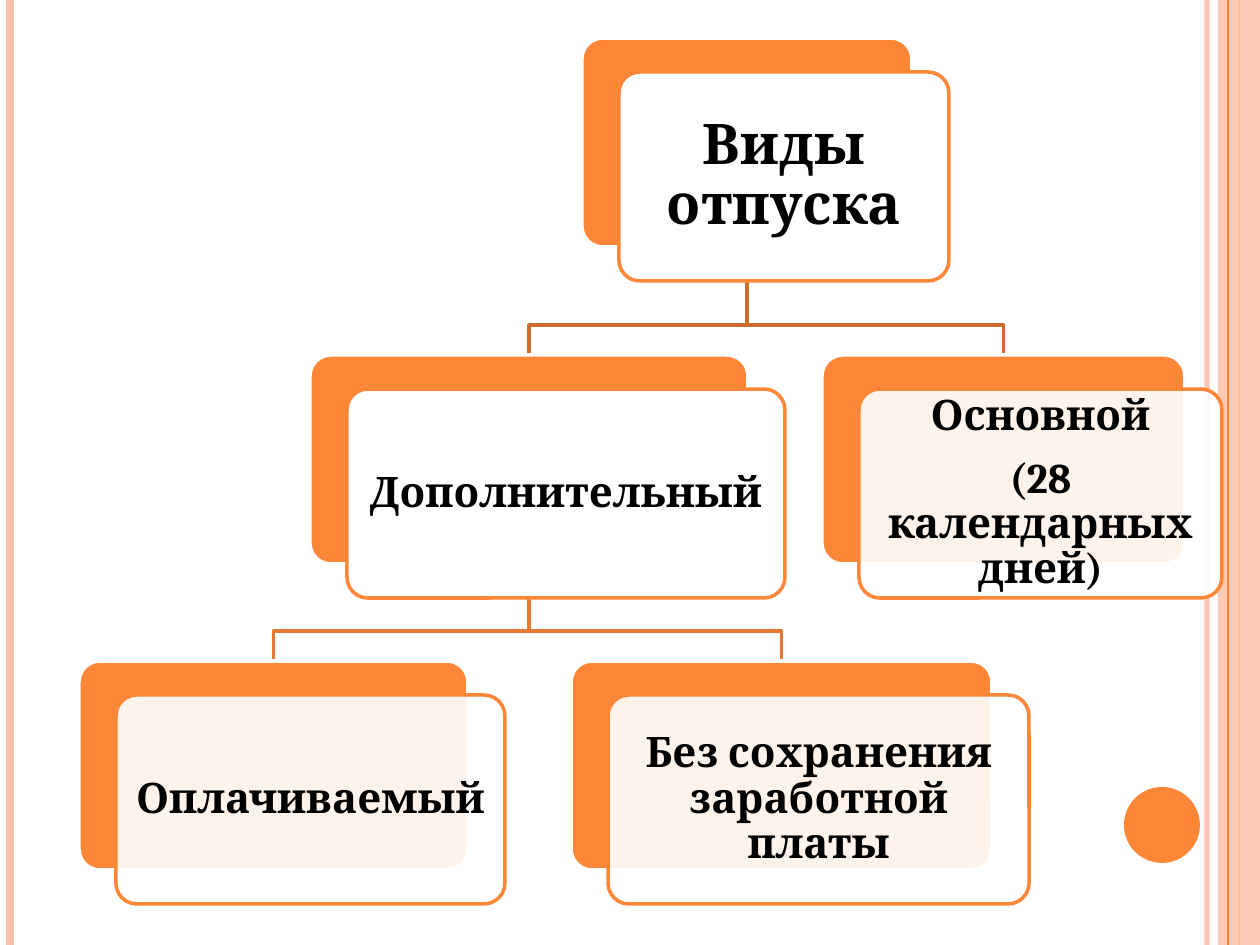
from collections import namedtuple

from lxml import etree
from pptx import Presentation
from pptx import util as u
from pptx.dml.color import RGBColor
from pptx.enum import shapes, text
from pptx.oxml.ns import qn

WIDTH, HEIGHT = 1260, 945
EMU_PER_PX = 914400 / 126
ORANGE, PEACH, WHITE, BLACK = "FE8637", "FEC3AE", "FFFFFF", "000000"
BOX_HEIGHT = 209
OFFSET_X, OFFSET_Y = 37, 34
BEND_GAP = 30

Box = namedtuple("Box", "left top width")


def px(value):
    return u.Emu(round(value * EMU_PER_PX))


def color(hex_string):
    return RGBColor.from_string(hex_string)


class SlideBuilder:
    font = "Cambria"

    def __init__(self, slide):
        self.slide = slide

    def set_alpha(self, parent, percent):
        if percent < 100:
            element = next(parent.iter(qn("a:srgbClr")))
            etree.SubElement(element, qn("a:alpha")).set("val", str(percent * 1000))

    def shape(self, kind, left, top, width, height, fill, line=None, alpha=100):
        shape = self.slide.shapes.add_shape(kind, px(left), px(top), px(width), px(height))
        shape.shadow.inherit = False
        shape.fill.solid()
        shape.fill.fore_color.rgb = color(fill)
        self.set_alpha(shape.element.spPr.find(qn("a:solidFill")), alpha)
        if line:
            shape.line.color.rgb = color(line)
            shape.line.width = u.Pt(2)
        else:
            shape.line.fill.background()
        return shape

    def vertical_rule(self, x, line, points, alpha=100):
        connector = self.slide.shapes.add_connector(
            shapes.MSO_CONNECTOR.STRAIGHT, px(x), 0, px(x), px(HEIGHT))
        connector.line.color.rgb = color(line)
        connector.line.width = u.Pt(points)
        properties = connector.element.spPr
        self.set_alpha(properties.find(qn("a:ln")), alpha)
        etree.SubElement(properties, qn("a:effectLst"))

    def branch(self, parent, child, line):
        start_x = parent.left + parent.width / 2
        end_x = child.left + child.width / 2
        bend_y = child.top - BEND_GAP
        builder = self.slide.shapes.build_freeform(
            px(start_x), px(parent.top + BOX_HEIGHT), scale=1.0)
        builder.add_line_segments(
            [(px(start_x), px(bend_y)), (px(end_x), px(bend_y)), (px(end_x), px(child.top))],
            close=False)
        shape = builder.convert_to_shape()
        shape.shadow.inherit = False
        shape.fill.background()
        shape.line.color.rgb = color(line)
        shape.line.width = u.Pt(2)

    def card(self, box, lines, size=24, inset=13, alpha=100):
        rounded = shapes.MSO_SHAPE.ROUNDED_RECTANGLE
        back = self.shape(rounded, *box, BOX_HEIGHT, ORANGE, WHITE)
        front = self.shape(rounded, box.left + OFFSET_X, box.top + OFFSET_Y,
                           box.width, BOX_HEIGHT, WHITE, ORANGE, alpha)
        for shape in (back, front):
            shape.adjustments[0] = 0.1
        frame = front.text_frame
        frame.word_wrap = True
        frame.vertical_anchor = text.MSO_ANCHOR.MIDDLE
        frame.margin_left = frame.margin_right = px(inset)
        frame.margin_top = frame.margin_bottom = px(inset)
        frame.text = "\n".join(lines)
        for paragraph in frame.paragraphs:
            paragraph.alignment = text.PP_ALIGN.CENTER
            paragraph.line_spacing = 0.9
            paragraph.space_after = u.Pt(10)
            for run in paragraph.runs:
                run.font.name = self.font
                run.font.size = u.Pt(size)
                run.font.bold = True
                run.font.color.rgb = color(BLACK)


def main():
    presentation = Presentation()
    presentation.slide_width = px(WIDTH)
    presentation.slide_height = px(HEIGHT)
    builder = SlideBuilder(presentation.slides.add_slide(presentation.slide_layouts[6]))

    builder.vertical_rule(1207, PEACH, 3, alpha=93)
    builder.vertical_rule(10, PEACH, 4.5)
    builder.vertical_rule(1239, ORANGE, 1.5)
    builder.shape(shapes.MSO_SHAPE.RECTANGLE, 1218, 0, 42, HEIGHT, PEACH, alpha=87)
    builder.vertical_rule(1228, ORANGE, 0.75)
    builder.shape(shapes.MSO_SHAPE.OVAL, 1124, 787, 76, 76, ORANGE)

    leave = Box(582, 38, 330)
    additional = Box(310, 355, 438)
    main_leave = Box(822, 355, 363)
    paid = Box(79, 661, 389)
    unpaid = Box(571, 661, 421)

    for parent, children, line in (
        (leave, (main_leave, additional), "CB6B2C"),
        (additional, (unpaid, paid), "E77A32"),
    ):
        for child in children:
            builder.branch(parent, child, line)

    builder.card(leave, ["Виды отпуска"], size=32, inset=16)
    builder.card(additional, ["Дополнительный"])
    builder.card(paid, ["Оплачиваемый"], alpha=90)
    builder.card(unpaid, ["Без сохранения заработной платы"], alpha=90)
    builder.card(main_leave, ["Основной", "(28 календарных дней)"], alpha=90)

    presentation.save("out.pptx")


if __name__ == "__main__":
    main()
